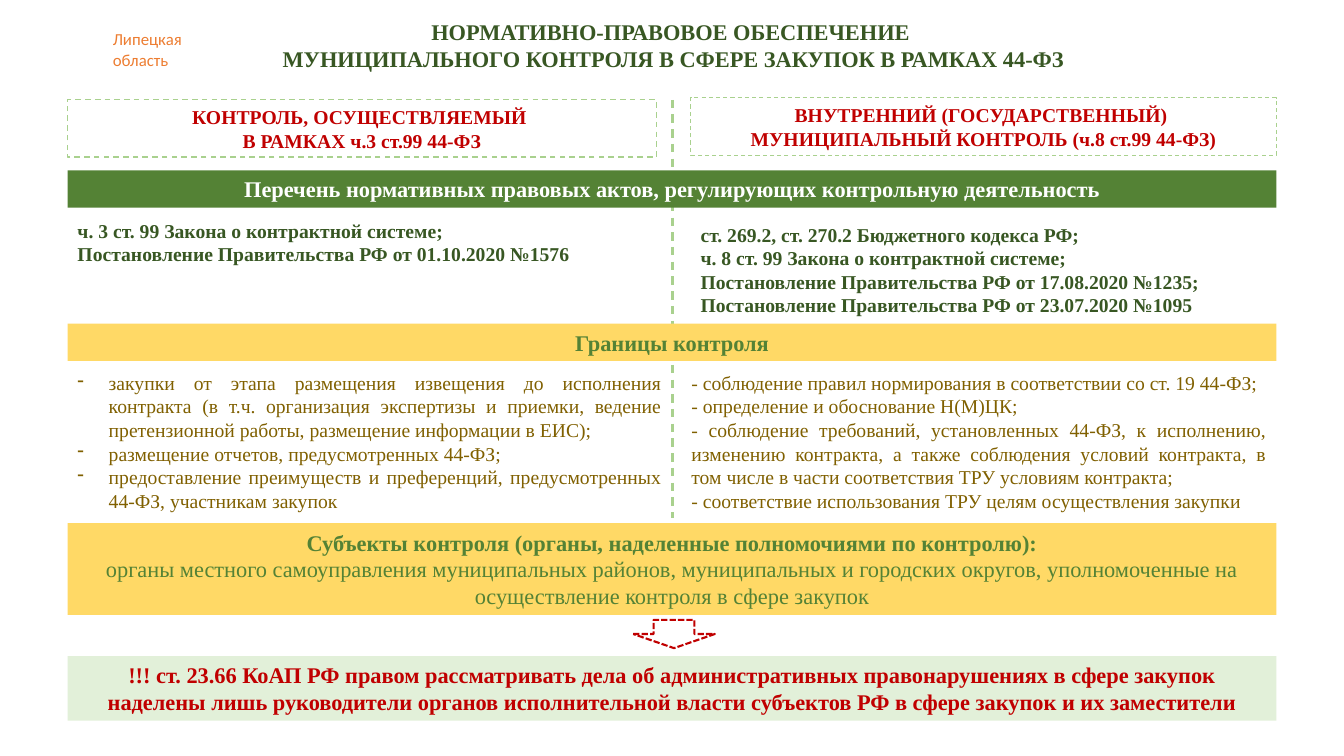
from lxml import etree
from pptx import Presentation
from pptx.dml.color import RGBColor
from pptx.enum.dml import MSO_LINE as Dash
from pptx.enum.shapes import MSO_CONNECTOR as Conn, MSO_SHAPE as Shape
from pptx.enum.text import MSO_ANCHOR as Anchor, PP_ALIGN as Align
from pptx.oxml.ns import qn
from pptx.util import Inches, Pt

HUES = {
    "orange": "ED7D31", "dark": "385723", "green": "548235",
    "lime": "A9D18E", "pale": "E2F0D9", "gold": "FFD966",
    "brown": "806000", "red": "C00000", "white": "FFFFFF",
}
LEFT, WIDE, MID = 0.67, 11.99, 6.67

REGION = ["Липецкая", "область"]
TITLE = [
    "НОРМАТИВНО-ПРАВОВОЕ ОБЕСПЕЧЕНИЕ ",
    "МУНИЦИПАЛЬНОГО КОНТРОЛЯ В СФЕРЕ ЗАКУПОК В РАМКАХ 44-ФЗ",
]
# left, top, width, line width, lines
HEADS = [
    (LEFT, 0.99, 5.84, 1,
     ["КОНТРОЛЬ, ОСУЩЕСТВЛЯЕМЫЙ ", "В РАМКАХ ч.3 ст.99 44-ФЗ"]),
    (6.85, 0.97, 5.81, 0.75,
     ["ВНУТРЕННИЙ (ГОСУДАРСТВЕННЫЙ) ",
      "МУНИЦИПАЛЬНЫЙ КОНТРОЛЬ (ч.8 ст.99 44-ФЗ)"]),
]
# top, height, fill, text colour, bold first line, plain second line
BANDS = [
    (1.69, 0.37, "green", "white",
     "Перечень нормативных правовых актов, регулирующих контрольную деятельность", ""),
    (3.21, 0.37, "gold", "green", "Границы контроля", ""),
    (5.19, 0.91, "gold", "green",
     "Субъекты контроля (органы, наделенные полномочиями по контролю):",
     "органы местного самоуправления муниципальных районов, муниципальных и "
     "городских округов, уполномоченные на осуществление контроля в сфере закупок"),
    (6.51, 0.64, "pale", "red",
     "!!! ст. 23.66 КоАП РФ правом рассматривать дела об административных "
     "правонарушениях в сфере закупок наделены лишь руководители органов "
     "исполнительной власти субъектов РФ в сфере закупок и их заместители", ""),
]
# place, lines, format
ACTS = [
    ((LEFT, 2.12, 5.99, 0.57),
     ["ч. 3 ст. 99 Закона о контрактной системе;",
      "Постановление Правительства РФ от 01.10.2020 №1576"],
     {"align": Align.JUSTIFY}),
    ((6.85, 2.16, 5.81, 1.04),
     ["ст. 269.2, ст. 270.2 Бюджетного кодекса РФ;",
      "ч. 8 ст. 99 Закона о контрактной системе;",
      "Постановление Правительства РФ от 17.08.2020 №1235;",
      "Постановление Правительства РФ от 23.07.2020 №1095"],
     {"align": Align.LEFT}),
]
LIMITS = [
    ((LEFT, 3.63, 5.99, 1.51),
     ["закупки от этапа размещения извещения до исполнения контракта (в т.ч. "
      "организация экспертизы и приемки, ведение претензионной работы, "
      "размещение информации в ЕИС);",
      "размещение отчетов, предусмотренных 44-ФЗ;",
      "предоставление преимуществ и преференций, предусмотренных 44-ФЗ, "
      "участникам закупок"],
     {"bullet": "-"}),
    ((6.76, 3.63, 5.9, 1.51),
     ["- соблюдение правил нормирования в соответствии со ст. 19 44-ФЗ;",
      "- определение и обоснование Н(М)ЦК;",
      "- соблюдение требований, установленных 44-ФЗ, к исполнению, изменению "
      "контракта, а также соблюдения условий контракта, в том числе в части "
      "соответствия ТРУ условиям контракта;",
      "- соответствие использования ТРУ целям осуществления закупки"],
     {}),
]

deck = Presentation()
deck.slide_width, deck.slide_height = Inches(13.33), Inches(7.5)
slide = deck.slides.add_slide(deck.slide_layouts[6])
shapes = slide.shapes


def hue(name):
    return RGBColor.from_string(HUES[name])


def write(box, lines, color, size=14, bold=False, align=Align.LEFT,
          face="Times New Roman", bullet=None, plain=""):
    """Fill a box with paragraphs; plain is a last one that is never bold."""
    frame = box.text_frame
    frame.word_wrap = True
    rows = [(line, bold) for line in lines]
    if plain:
        rows.append((plain, False))
    for i, (line, thick) in enumerate(rows):
        para = frame.paragraphs[0] if i == 0 else frame.add_paragraph()
        para.alignment = align
        if bullet:
            props = para._p.get_or_add_pPr()
            props.set("marL", str(Inches(0.31)))
            props.set("indent", str(-Inches(0.31)))
            etree.SubElement(props, qn("a:buChar")).set("char", bullet)
        run = para.add_run()
        run.text = line
        font = run.font
        font.name, font.size, font.bold = face, Pt(size), thick
        font.color.rgb = hue(color)


def label(place, lines, color, **style):
    box = shapes.add_textbox(*map(Inches, place))
    write(box, lines, color, **style)


def stroke(line, color, width, dash):
    line.color.rgb = hue(color)
    line.width = Pt(width)
    line.dash_style = dash


def block(place, fill=None, kind=Shape.RECTANGLE):
    box = shapes.add_shape(kind, *map(Inches, place))
    box.shadow.inherit = False
    box.line.fill.background()
    if fill:
        box.fill.solid()
        box.fill.fore_color.rgb = hue(fill)
    else:
        box.fill.background()
    box.text_frame.vertical_anchor = Anchor.MIDDLE
    return box


label((1.02, 0.24, 0.91, 0.5), REGION, "orange", size=12, face="Calibri")
label((0.98, 0.13, 11.4, 0.64), TITLE, "dark", size=16, bold=True,
      align=Align.CENTER)

for left, top, width, weight, lines in HEADS:
    head = block((left, top, width, 0.57))
    stroke(head.line, "lime", weight, Dash.DASH)
    write(head, lines, "red", bold=True, align=Align.CENTER)

split = shapes.add_connector(
    Conn.STRAIGHT, Inches(MID), Inches(0.99), Inches(MID), Inches(5.14))
stroke(split.line, "lime", 1.5, Dash.DASH)
etree.SubElement(split._element.spPr, qn("a:effectLst"))

for top, height, fill, color, line, plain in BANDS:
    band = block((LEFT, top, WIDE, height), fill)
    write(band, [line], color, size=16, bold=True, align=Align.CENTER,
          plain=plain)

for place, lines, style in ACTS:
    label(place, lines, "dark", bold=True, **style)
for place, lines, style in LIMITS:
    label(place, lines, "brown", align=Align.JUSTIFY, **style)

arrow = block((6.28, 6.15, 0.81, 0.28), "white", Shape.DOWN_ARROW)
stroke(arrow.line, "red", 1.5, Dash.SQUARE_DOT)

deck.save("out.pptx")
